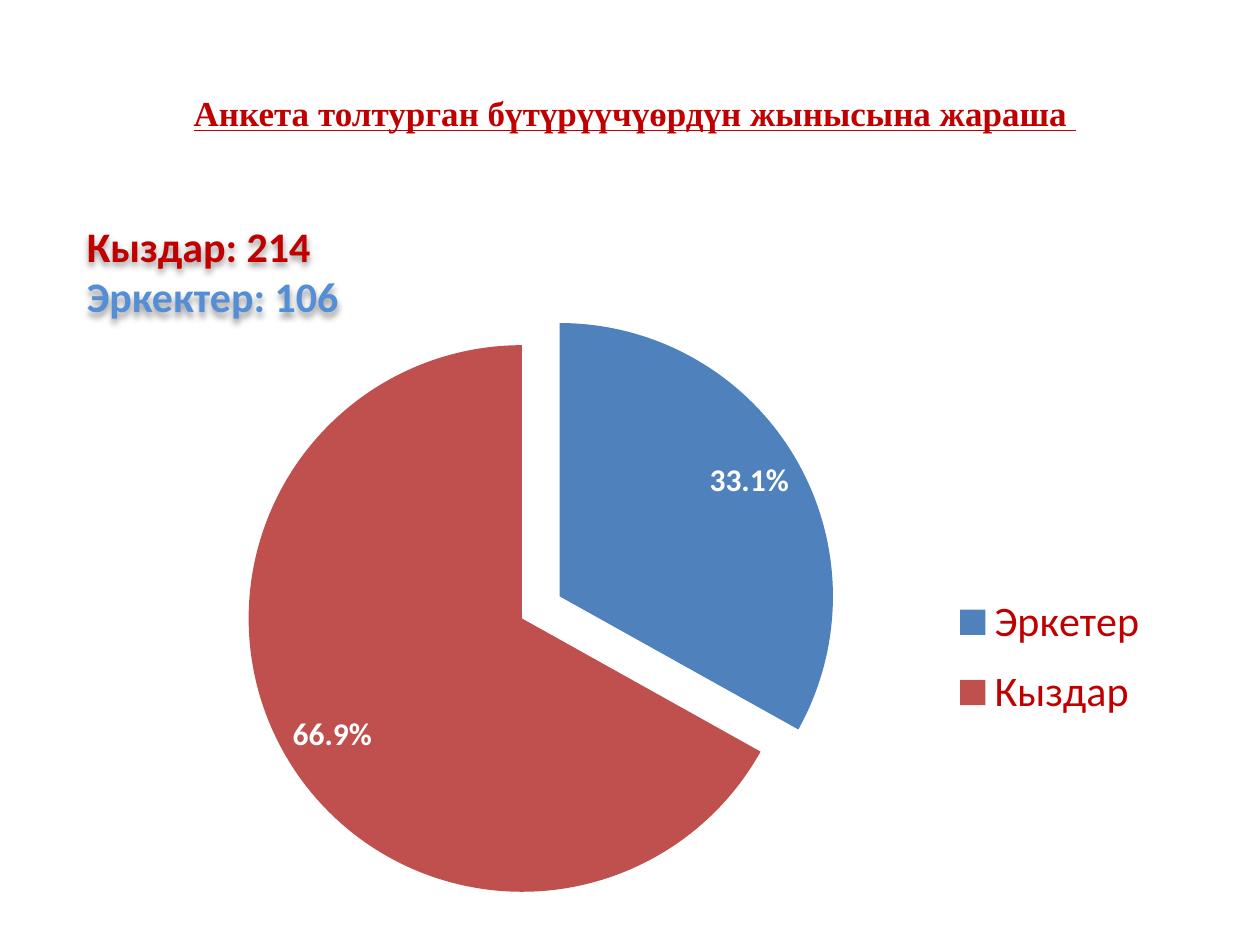
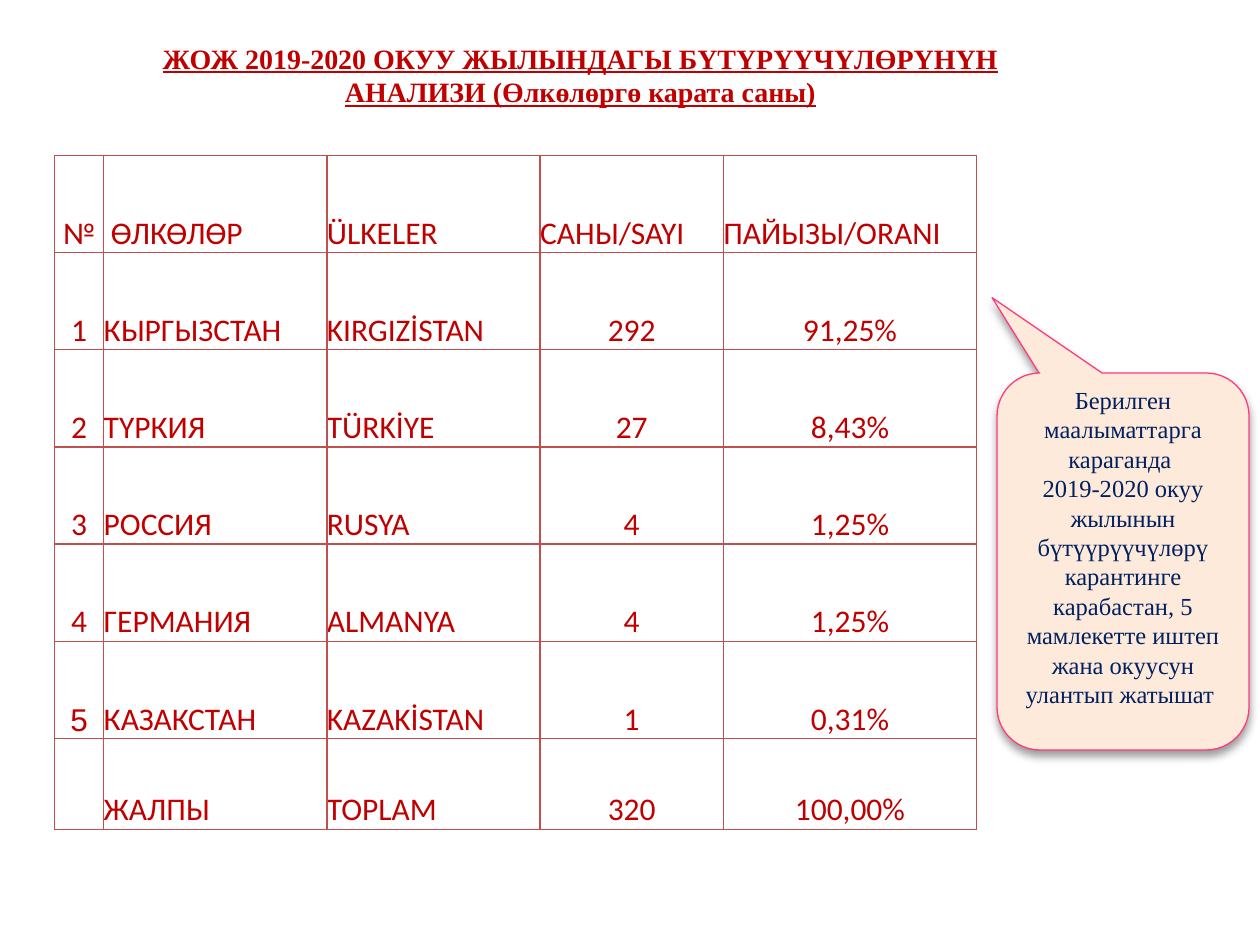
from lxml.etree import SubElement
from pptx import Presentation
from pptx.chart.data import CategoryChartData
from pptx.dml.color import RGBColor
from pptx.enum.chart import XL_CHART_TYPE, XL_LABEL_POSITION, XL_LEGEND_POSITION
from pptx.enum.shapes import MSO_SHAPE
from pptx.enum.text import MSO_ANCHOR, MSO_AUTO_SIZE, PP_ALIGN
from pptx.oxml import parse_xml
from pptx.oxml.ns import nsdecls, qn
from pptx.util import Cm, Pt

COLORS = {
    "red": "C00000",
    "light_blue": "558ED5",
    "men": "4F81BD",
    "women": "C0504D",
    "white": "FFFFFF",
    "navy": "002060",
    "callout_fill": "FDEADA",
    "callout_line": "FF3B7C",
    "shadow": "000000",
}
BODY_FONT = "Calibri"
TITLE_FONT = "Times New Roman"
TITLE_ONLY_LAYOUT = 5

COUNTRY_ROWS = [
    ("№", " ӨЛКӨЛӨР", "ÜLKELER", "САНЫ/SAYI", "ПАЙЫЗЫ/ORANI"),
    ("1", "КЫРГЫЗСТАН", "KIRGIZİSTAN", "292", "91,25%"),
    ("2", "ТҮРКИЯ", "TÜRKİYE", "27", "8,43%"),
    ("3", "РОССИЯ", "RUSYA", "4", "1,25%"),
    ("4", "ГЕРМАНИЯ", "ALMANYA", "4", "1,25%"),
    ("5", "КАЗАКСТАН", "KAZAKİSTAN", "1", "0,31%"),
    ("", "ЖАЛПЫ", "TOPLAM", "320", "100,00%"),
]
COLUMN_WIDTHS = (0.99, 4.5, 4.3, 3.69, 5.11)
ROW_HEIGHTS = (1.96,) * 6 + (1.83,)


def color(name):
    return RGBColor.from_string(COLORS[name])


def box(left, top, width, height):
    return Cm(left), Cm(top), Cm(width), Cm(height)


def format_font(font, size, color_name, name=BODY_FONT, bold=False, underline=False):
    font.size = Pt(size)
    font.name = name
    font.bold = bold
    font.underline = underline
    font.color.rgb = color(color_name)


def format_paragraph(paragraph, alignment, size, color_name, **style):
    paragraph.alignment = alignment
    for run in paragraph.runs:
        format_font(run.font, size, color_name, **style)


def add_shadow(shape, blur, distance):
    shape.shadow.inherit = False
    effects = shape._element.spPr.find(qn("a:effectLst"))
    shadow = SubElement(effects, qn("a:outerShdw"), blurRad=str(Pt(blur)),
                        dist=str(Pt(distance)), dir="5400000", rotWithShape="0")
    shadow_color = SubElement(shadow, qn("a:srgbClr"), val=COLORS["shadow"])
    SubElement(shadow_color, qn("a:alpha"), val="40000")


def add_titled_slide(presentation, text, size, place):
    slide = presentation.slides.add_slide(presentation.slide_layouts[TITLE_ONLY_LAYOUT])
    title = slide.shapes.title
    title.left, title.top, title.width, title.height = place
    frame = title.text_frame
    frame.text = text
    frame.auto_size = MSO_AUTO_SIZE.NONE
    frame.vertical_anchor = MSO_ANCHOR.TOP
    format_paragraph(frame.paragraphs[0], PP_ALIGN.CENTER, size, "red",
                     name=TITLE_FONT, bold=True, underline=True)
    return slide


def manual_layout(x, y, width, height, inner=False):
    target = '<c:layoutTarget val="inner"/>' if inner else ""
    return parse_xml(
        f'<c:layout {nsdecls("c")}><c:manualLayout>{target}'
        '<c:xMode val="edge"/><c:yMode val="edge"/>'
        f'<c:x val="{x}"/><c:y val="{y}"/><c:w val="{width}"/><c:h val="{height}"/>'
        '</c:manualLayout></c:layout>')


def replace_layout(parent, layout, position):
    for previous in parent.findall(qn("c:layout")):
        parent.remove(previous)
    parent.insert(position, layout)


def add_gender_pie(slide, place):
    data = CategoryChartData()
    data.categories = ["Эркетер", "Кыздар"]
    data.add_series("Series 1", (33.1, 66.9))
    chart = slide.shapes.add_chart(XL_CHART_TYPE.PIE, *place, data).chart
    chart.has_title = False
    format_font(chart.font, 18, "white")

    chart.has_legend = True
    legend = chart.legend
    legend.position = XL_LEGEND_POSITION.RIGHT
    legend.include_in_layout = False
    format_font(legend.font, 24, "red")
    replace_layout(legend._element, manual_layout(0.79, 0.45, 0.2, 0.24), 1)

    plot = chart.plots[0]
    plot.vary_by_categories = True
    series = plot.series[0]
    for index, name in enumerate(("men", "women")):
        fill = series.points[index].format.fill
        fill.solid()
        fill.fore_color.rgb = color(name)
    first_point = series._element.find(qn("c:dPt"))
    first_point.addprevious(parse_xml(f'<c:explosion {nsdecls("c")} val="8"/>'))

    plot.has_data_labels = True
    labels = plot.data_labels
    labels.show_value = False
    labels.show_percentage = True
    labels.number_format = "0.0%"
    labels.number_format_is_linked = False
    labels.position = XL_LABEL_POSITION.INSIDE_END
    format_font(labels.font, 18, "white", bold=True)
    plot_area = chart._chartSpace.chart.plotArea
    replace_layout(plot_area, manual_layout(0.1, 0.05, 0.58, 0.89, inner=True), 0)


def add_gender_counts(slide, place):
    counts = slide.shapes.add_textbox(*place)
    frame = counts.text_frame
    frame.word_wrap = True
    frame.text = "Кыздар: 214\nЭркектер: 106"
    for paragraph, name in zip(frame.paragraphs, ("red", "light_blue")):
        format_paragraph(paragraph, PP_ALIGN.LEFT, 24, name, bold=True)
    add_shadow(counts, blur=4, distance=2)


def add_cell_borders(cell):
    properties = cell._tc.get_or_add_tcPr()
    for position, side in enumerate(("a:lnL", "a:lnR", "a:lnT", "a:lnB")):
        line = parse_xml(
            f'<{side} {nsdecls("a")} w="{Pt(1)}"><a:solidFill>'
            f'<a:srgbClr val="{COLORS["women"]}"/></a:solidFill></{side}>')
        properties.insert(position, line)


def format_cell(cell, text, alignment, font_name):
    cell.text = text
    cell.fill.background()
    cell.vertical_anchor = MSO_ANCHOR.BOTTOM
    cell.margin_left = cell.margin_right = cell.margin_top = cell.margin_bottom = 0
    format_paragraph(cell.text_frame.paragraphs[0], alignment, 18, "red", name=font_name)
    add_cell_borders(cell)


def add_country_table(slide, place):
    frame = slide.shapes.add_table(len(ROW_HEIGHTS), len(COLUMN_WIDTHS), *place)
    table = frame.table
    table.first_row = table.horz_banding = False
    for column, width in zip(table.columns, COLUMN_WIDTHS):
        column.width = Cm(width)
    for row, height in zip(table.rows, ROW_HEIGHTS):
        row.height = Cm(height)
    for row_index, values in enumerate(COUNTRY_ROWS):
        for column_index, text in enumerate(values):
            centered = column_index == 0 or (row_index > 0 and column_index > 2)
            alignment = PP_ALIGN.CENTER if centered else PP_ALIGN.LEFT
            font_name = "Arial" if text == "5" else BODY_FONT
            format_cell(table.cell(row_index, column_index), text, alignment, font_name)


def add_conclusion_callout(slide, place):
    callout = slide.shapes.add_shape(MSO_SHAPE.ROUNDED_RECTANGULAR_CALLOUT, *place)
    for index, value in enumerate((-0.52, -0.7, 0.17)):
        callout.adjustments[index] = value
    callout.fill.solid()
    callout.fill.fore_color.rgb = color("callout_fill")
    callout.line.color.rgb = color("callout_line")
    callout.line.width = Pt(0.75)
    add_shadow(callout, blur=5.2, distance=3)
    frame = callout.text_frame
    frame.word_wrap = True
    frame.vertical_anchor = MSO_ANCHOR.MIDDLE
    frame.margin_bottom = Cm(0.72)
    frame.text = ("Берилген маалыматтарга караганда \n"
                  "2019-2020 окуу жылынын бүтүүрүүчүлөрү карантинге карабастан, "
                  "5 мамлекетте иштеп жана окуусун улантып жатышат ")
    for paragraph in frame.paragraphs:
        format_paragraph(paragraph, PP_ALIGN.CENTER, 14, "navy", name=TITLE_FONT)


def build_gender_slide(presentation):
    slide = add_titled_slide(presentation,
                             "Анкета толтурган бүтүрүүчүөрдүн жынысына жараша ",
                             20, box(2.5, 1.72, 20.6, 1.12))
    add_gender_pie(slide, box(2.9, 5.61, 20.52, 13.41))
    add_gender_counts(slide, box(1.5, 4.32, 13.54, 2.31))


def build_country_slide(presentation):
    slide = add_titled_slide(presentation,
                             "ЖОЖ 2019-2020 ОКУУ ЖЫЛЫНДАГЫ БҮТҮРҮҮЧҮЛӨРҮНҮН "
                             "АНАЛИЗИ (Өлкөлөргө карата саны)",
                             16, box(2.9, 0.7, 17.6, 1.63))
    add_conclusion_callout(slide, box(20.1, 7.52, 5.08, 7.6))
    add_country_table(slide, box(1.1, 3.13, sum(COLUMN_WIDTHS), sum(ROW_HEIGHTS)))


def main():
    presentation = Presentation()
    presentation.slide_width = Cm(25.4)
    presentation.slide_height = Cm(19.05)
    build_gender_slide(presentation)
    build_country_slide(presentation)
    presentation.save("out.pptx")


if __name__ == "__main__":
    main()
